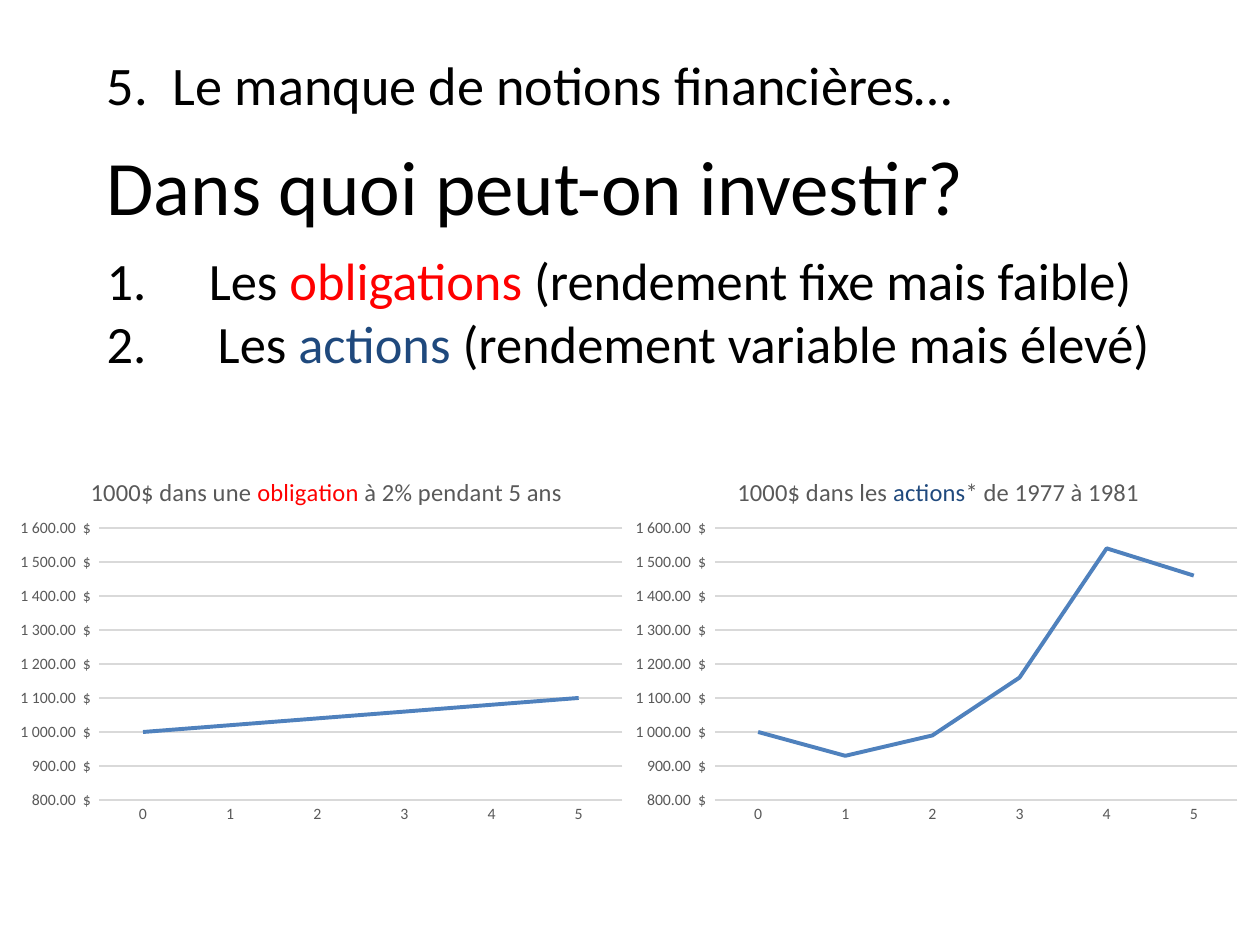
from dataclasses import dataclass

import pptx
import pptx.chart.data
import pptx.dml.color
import pptx.enum.chart
import pptx.enum.text
import pptx.oxml
import pptx.util
from pptx.oxml import ns

Cm = pptx.util.Cm
Pt = pptx.util.Pt
RGBColor = pptx.dml.color.RGBColor

BLACK = RGBColor(0x00, 0x00, 0x00)
RED = RGBColor(0xFF, 0x00, 0x00)
NAVY = RGBColor(0x1F, 0x49, 0x7D)
GREY = RGBColor(0x59, 0x59, 0x59)
LIGHT_GREY = RGBColor(0xD9, 0xD9, 0xD9)
BLUE = RGBColor(0x4F, 0x81, 0xBD)
FONT = "Calibri"
YEARS = ["0", "1", "2", "3", "4", "5"]
DOLLARS = r"_ * #\ ##0.00_)\ [$$-C0C]_ "


@dataclass
class Run:
    text: str
    color: RGBColor


@dataclass
class GrowthChart:
    left: float
    title: list[Run]
    title_x: float
    values: list[int]


@dataclass
class ListItem:
    number: int
    indent: float
    runs: list[Run]


ITEMS = [
    ListItem(1, 2.06, [Run("Les ", BLACK), Run("obligations ", RED),
                       Run("(rendement fixe mais faible)", BLACK)]),
    ListItem(2, 2.24, [Run("Les ", BLACK), Run("actions", NAVY),
                       Run(" (rendement variable mais élevé)", BLACK)]),
]
CHARTS = [
    GrowthChart(0.1, [Run("1000$ dans une ", GREY), Run("obligation ", RED),
                      Run("à 2% pendant 5 ans", GREY)],
                0.13, [1000, 1020, 1040, 1060, 1080, 1100]),
    GrowthChart(12.5, [Run("1000$ dans les ", GREY), Run("actions", NAVY),
                       Run("* de 1977 à 1981", GREY)],
                0.18, [1000, 930, 990, 1160, 1540, 1460]),
]


def apply(target, values: dict) -> None:
    for name, value in values.items():
        setattr(target, name, value)


def style_font(font, size: float, color: RGBColor) -> None:
    apply(font, {"name": FONT, "size": Pt(size), "bold": False})
    font.color.rgb = color


def add_runs(p, runs: list[Run], size: float) -> None:
    for run in runs:
        r = p.add_run()
        r.text = run.text
        style_font(r.font, size, run.color)


def number_paragraph(p, number: int, indent: float) -> None:
    """Give the paragraph an automatic number and a hanging indent."""
    pPr = p._p.get_or_add_pPr()
    pPr.set("marL", str(Cm(indent)))
    pPr.set("indent", str(-Cm(indent)))
    pPr.append(pptx.oxml.parse_xml(
        f'<a:buFont {ns.nsdecls("a")} typeface="{FONT}"/>'))
    pPr.append(pptx.oxml.parse_xml(
        f'<a:buAutoNum {ns.nsdecls("a")} type="arabicPeriod" startAt="{number}"/>'))


def set_layout(element, **parts: float) -> None:
    """Place a chart part by fractions of the chart's size."""
    inner = '<c:layoutTarget val="inner"/>' if "w" in parts else ""
    modes = "".join(f'<c:{k}Mode val="edge"/>' for k in parts if k in "xy")
    sizes = "".join(f'<c:{k} val="{v}"/>' for k, v in parts.items())
    for old in element.findall(ns.qn("c:layout")):
        element.remove(old)
    position = 0 if element.find(ns.qn("c:tx")) is None else 1
    element.insert(position, pptx.oxml.parse_xml(
        f'<c:layout {ns.nsdecls("c")}><c:manualLayout>{inner}{modes}{sizes}'
        '</c:manualLayout></c:layout>'))


def add_growth_chart(s, growth: GrowthChart) -> None:
    data = pptx.chart.data.CategoryChartData(number_format=DOLLARS)
    data.categories = YEARS
    data.add_series("Series 1", growth.values)
    chart = s.shapes.add_chart(
        pptx.enum.chart.XL_CHART_TYPE.LINE, Cm(growth.left), Cm(9.12),
        Cm(12.7), Cm(7.62), data).chart
    style_font(chart.font, 10, BLACK)
    chart.has_legend = False

    # Title
    chart.has_title = True
    title = chart.chart_title
    add_runs(title.text_frame.paragraphs[0], growth.title, 14)
    set_layout(title._element, x=growth.title_x, y=0.05)

    # Axes
    for axis in (chart.category_axis, chart.value_axis):
        apply(axis, {"major_tick_mark": pptx.enum.chart.XL_TICK_MARK.NONE,
                     "minor_tick_mark": pptx.enum.chart.XL_TICK_MARK.NONE})
        style_font(axis.tick_labels.font, 9, GREY)
    apply(chart.value_axis, {"minimum_scale": 800, "maximum_scale": 1600,
                             "major_unit": 100, "has_major_gridlines": True})
    apply(chart.value_axis.tick_labels, {"number_format": DOLLARS,
                                         "number_format_is_linked": False})
    chart.value_axis.format.line.fill.background()
    for line in (chart.category_axis.format.line,
                 chart.value_axis.major_gridlines.format.line):
        line.color.rgb = LIGHT_GREY
        line.width = Pt(0.75)

    # Plot and line
    plot = chart.plots[0]
    plot.vary_by_categories = False
    set_layout(chart._chartSpace.chart.plotArea, x=0.15, y=0.2, w=0.83, h=0.72)
    series = plot.series[0]
    series.smooth = False
    series.marker.style = pptx.enum.chart.XL_MARKER_STYLE.NONE
    series.format.line.color.rgb = BLUE
    series.format.line.width = Pt(2.25)


def main() -> None:
    prs = pptx.Presentation()
    apply(prs, {"slide_width": Cm(25.4), "slide_height": Cm(19.05)})
    s = prs.slides.add_slide(prs.slide_layouts[5])

    # Numbered title
    sp = s.shapes.title
    apply(sp, {"left": Cm(1.9), "top": Cm(0.9),
               "width": Cm(21.6), "height": Cm(1.6)})
    tf = sp.text_frame
    apply(tf, {"word_wrap": True,
               "auto_size": pptx.enum.text.MSO_AUTO_SIZE.NONE,
               "vertical_anchor": pptx.enum.text.MSO_ANCHOR.TOP})
    p = tf.paragraphs[0]
    p.alignment = pptx.enum.text.PP_ALIGN.LEFT
    number_paragraph(p, 5, 1.33)
    add_runs(p, [Run("Le manque de notions financières…", BLACK)], 31)

    # Question and its answers
    tf = s.shapes.add_textbox(Cm(1.9), Cm(2.67), Cm(21.6), Cm(5.4)).text_frame
    tf.word_wrap = True
    p = tf.paragraphs[0]
    p.space_after = Pt(10)
    add_runs(p, [Run("Dans quoi peut-on investir?", BLACK)], 44)
    for item in ITEMS:
        p = tf.add_paragraph()
        p.alignment = pptx.enum.text.PP_ALIGN.JUSTIFY
        number_paragraph(p, item.number, item.indent)
        add_runs(p, item.runs, 30)

    # Bond and share growth
    for growth in CHARTS:
        add_growth_chart(s, growth)

    prs.save("out.pptx")


if __name__ == "__main__":
    main()
